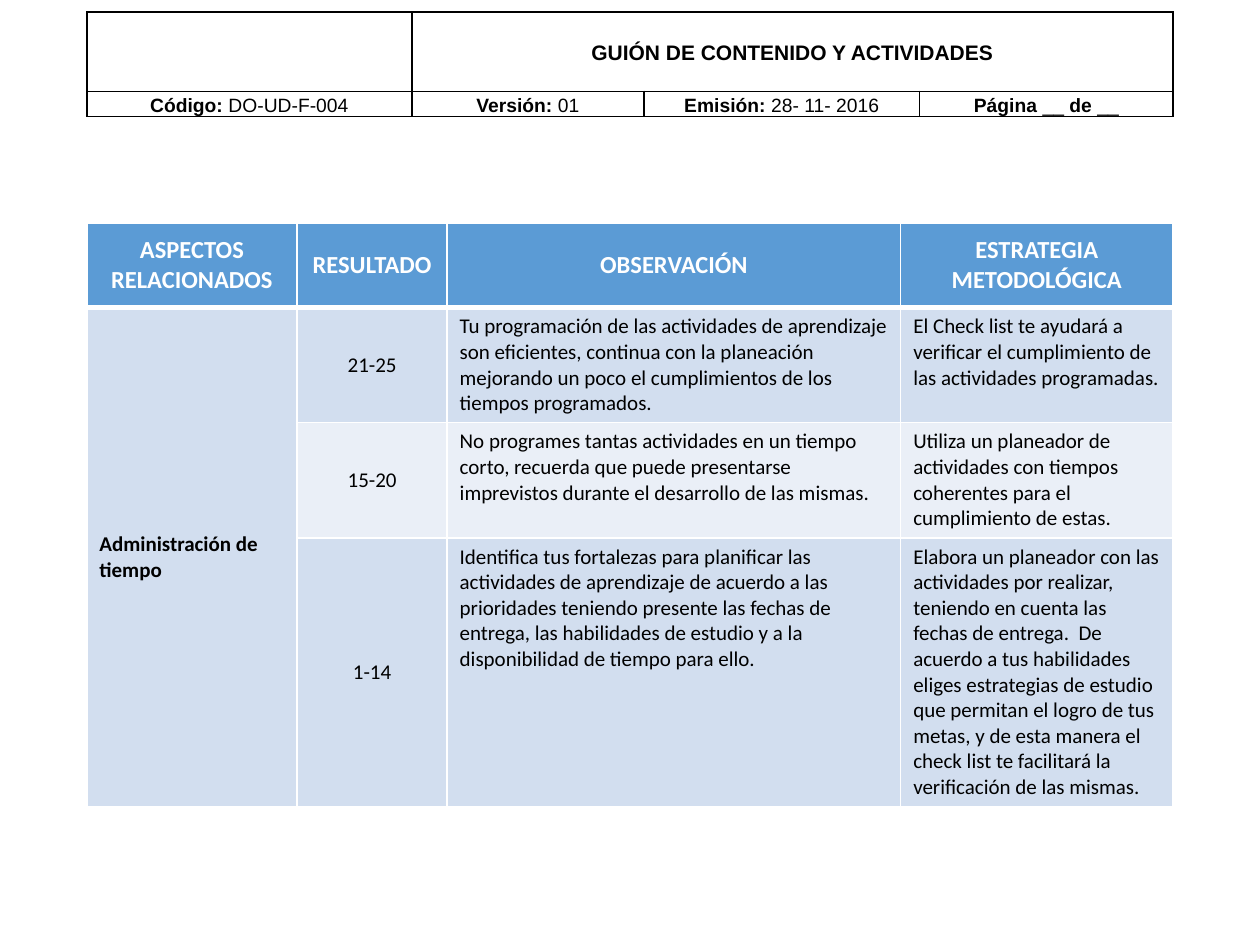
import pptx
import pptx.util
import pptx.dml.color
import pptx.enum.text
import pptx.oxml
import pptx.oxml.ns

Pt = pptx.util.Pt
CENTER = pptx.enum.text.PP_ALIGN.CENTER
LEFT = pptx.enum.text.PP_ALIGN.LEFT
MIDDLE = pptx.enum.text.MSO_ANCHOR.MIDDLE
TOP = pptx.enum.text.MSO_ANCHOR.TOP

COLORS = {"ink": "000000", "paper": "FFFFFF", "heading": "5B9BD5",
          "dark_band": "D2DEEF", "light_band": "EAEFF7"}

FORM_TITLE = "GUIÓN DE CONTENIDO Y ACTIVIDADES"
# Each entry is a list of (text, bold) spans.
FORM_DETAILS = [
    [("Código: ", True), ("DO-UD-F-004", False)],
    [("Versión:", True), (" 01", False)],
    [("Emisión:", True), (" 28- 11- 2016", False)],
    [("Página ", True), ("__ ", False), ("de ", True), ("__", False)],
]
HEADINGS = ["ASPECTOS RELACIONADOS", "RESULTADO", "OBSERVACIÓN", "ESTRATEGIA METODOLÓGICA"]
ASPECT = "Administración de tiempo"
RESULTS = [
    ("21-25",
     "Tu programación de las actividades de aprendizaje son eficientes, continua con la "
     "planeación mejorando un poco el cumplimientos de los tiempos programados.",
     "El Check list te ayudará a verificar el cumplimiento de las actividades programadas."),
    ("15-20",
     "No programes tantas actividades en un tiempo corto, recuerda que puede presentarse "
     "imprevistos durante el desarrollo de las mismas.",
     "Utiliza un planeador de actividades con tiempos coherentes para el cumplimiento de estas."),
    ("1-14",
     "Identifica tus fortalezas para planificar las actividades de aprendizaje de acuerdo a las "
     "prioridades teniendo presente las fechas de entrega, las habilidades de estudio y a la "
     "disponibilidad de tiempo para ello.",
     "Elabora un planeador con las actividades por realizar, teniendo en cuenta las fechas de "
     "entrega.  De acuerdo a tus habilidades eliges estrategias de estudio que permitan el logro "
     "de tus metas, y de esta manera el check list te facilitará la verificación de las mismas."),
]

TABLE_LEFT = 49.6
FORM_TOP, FORM_WIDTHS, FORM_HEIGHTS = 6.8, [185.8, 132.5, 157.7, 144.7], [45.4, 14.4]
GUIDE_TOP, GUIDE_WIDTHS, GUIDE_HEIGHTS = 127.6, [120.2, 85.7, 259.2, 155.5], [48.2, 65.8, 65.8, 153.2]


def rgb(name):
    return pptx.dml.color.RGBColor.from_string(COLORS[name])


def add_plain_table(page, top, widths, heights):
    frame = page.shapes.add_table(len(heights), len(widths), Pt(TABLE_LEFT), Pt(top),
                                  Pt(sum(widths)), Pt(sum(heights)))
    table = frame.table
    table.first_row = table.horz_banding = False
    for column, width in zip(table.columns, widths):
        column.width = Pt(width)
    for row, height in zip(table.rows, heights):
        row.height = Pt(height)
    return table


def set_borders(cell, color, top=1, bottom=1):
    """Draw all four edges; the edges must precede the fill in the cell properties."""
    properties = cell._tc.get_or_add_tcPr()
    edges = [("L", 1), ("R", 1), ("T", top), ("B", bottom)]
    for index, (side, width) in enumerate(edges):
        properties.insert(index, pptx.oxml.parse_xml(
            f'<a:ln{side} {pptx.oxml.ns.nsdecls("a")} w="{Pt(width)}"><a:solidFill>'
            f'<a:srgbClr val="{COLORS[color]}"/></a:solidFill></a:ln{side}>'))


def write(cell, spans, font, size, color="ink", align=CENTER, anchor=MIDDLE):
    """Put (text, bold) spans into the cell's paragraph and return it."""
    cell.vertical_anchor = anchor
    para = cell.text_frame.paragraphs[0]
    para.alignment = align
    para.font.name, para.font.size = font, Pt(size)
    para.font.color.rgb = rgb(color)
    for text, bold in spans:
        span = para.add_run()
        span.text, span.font.bold = text, bold
    return para


def add_form_header(page):
    table = add_plain_table(page, FORM_TOP, FORM_WIDTHS, FORM_HEIGHTS)
    for cell in table.iter_cells():
        cell.fill.background()
        set_borders(cell, "ink")
        cell.margin_left = cell.margin_right = Pt(3.6)
        cell.margin_top = cell.margin_bottom = Pt(0)
    table.cell(0, 1).merge(table.cell(0, 3))
    title = write(table.cell(0, 1), [(FORM_TITLE, True)], "Arial", 12)
    title.line_spacing, title.space_before, title.space_after = 1.15, Pt(12), Pt(3)
    for column, spans in enumerate(FORM_DETAILS):
        write(table.cell(1, column), spans, "Arial", 11).line_spacing = 1.15


def add_guide(page):
    table = add_plain_table(page, GUIDE_TOP, GUIDE_WIDTHS, GUIDE_HEIGHTS)
    bands = ["heading", "dark_band", "light_band", "dark_band"]
    for row, band in enumerate(bands):
        for column in range(len(GUIDE_WIDTHS)):
            cell = table.cell(row, column)
            cell.fill.solid()
            cell.fill.fore_color.rgb = rgb(band)
            set_borders(cell, "paper", top=3 if row == 1 else 1, bottom=3 if row == 0 else 1)
    table.cell(1, 0).merge(table.cell(3, 0))

    for column, heading in enumerate(HEADINGS):
        write(table.cell(0, column), [(heading, True)], "Calibri", 14, "paper")
    write(table.cell(1, 0), [(ASPECT, True)], "Calibri", 12, align=LEFT)
    for row, (score, *advice) in enumerate(RESULTS, start=1):
        write(table.cell(row, 1), [(score, False)], "Calibri", 12)
        for column, text in enumerate(advice, start=2):
            write(table.cell(row, column), [(text, False)], "Calibri", 12, align=LEFT, anchor=TOP)


def main():
    deck = pptx.Presentation()
    deck.slide_width, deck.slide_height = Pt(720), Pt(540)
    page = deck.slides.add_slide(deck.slide_layouts[6])
    add_form_header(page)
    add_guide(page)
    deck.save("out.pptx")


if __name__ == "__main__":
    main()
